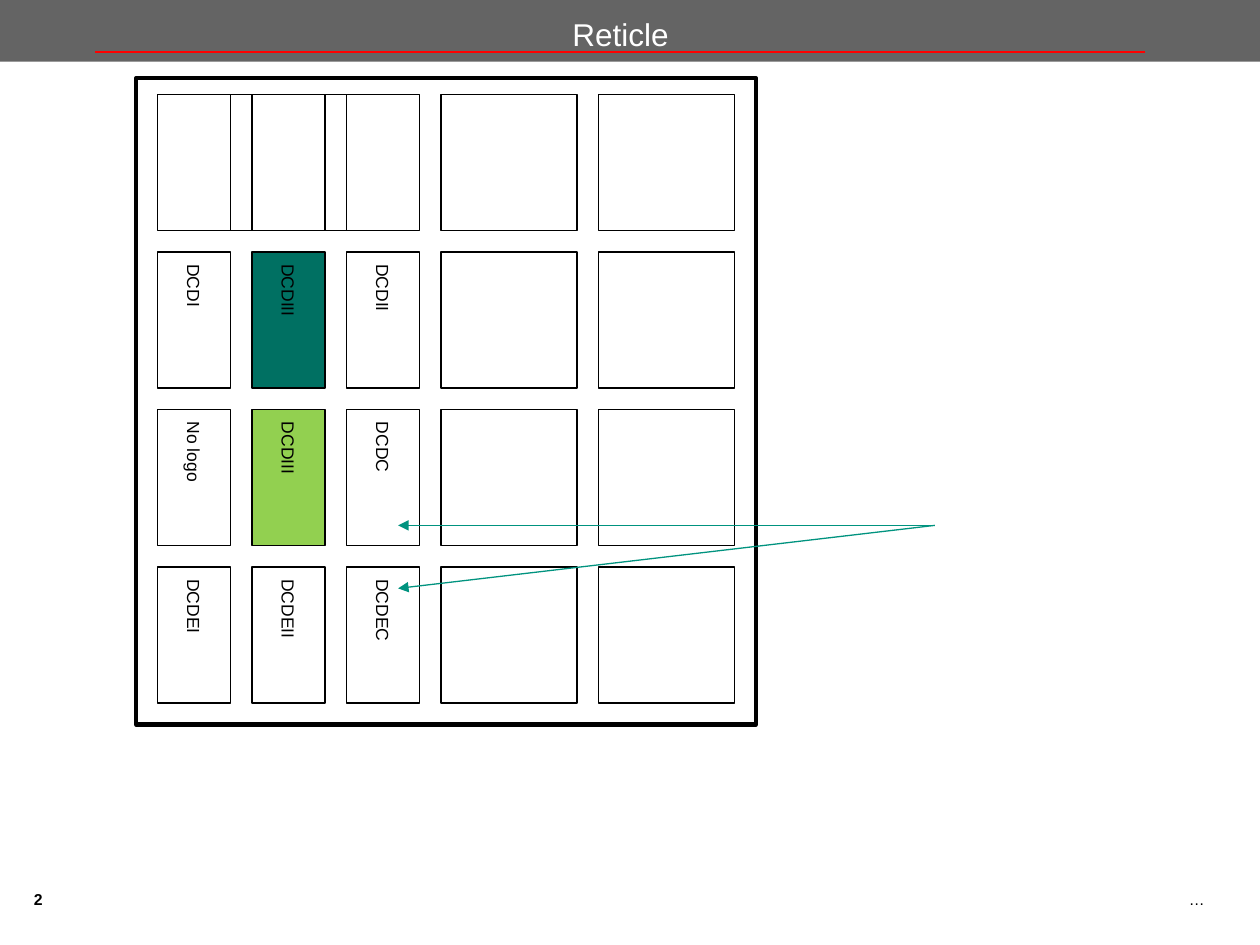
from itertools import product

from lxml.etree import SubElement
from pptx import Presentation
from pptx.dml.color import RGBColor
from pptx.enum.shapes import MSO_CONNECTOR as Conn, MSO_SHAPE as Kind
from pptx.enum.text import MSO_ANCHOR as Anchor, PP_ALIGN as Align
from pptx.oxml.ns import qn
from pptx.util import Inches, Pt

LEFT, TOP = 1.25, 0.75
STEP, PITCH = 0.75, 1.25
SLIM, SIDE, GAP = 0.58, 1.08, 0.17
WIDE = LEFT + 3 * STEP
DIES = [
    ["DCDI", "DCDIII", "DCDII"],
    ["No logo", "DCDIII", "DCDC"],
    ["DCDEI", "DCDEII", "DCDEC"],
]
FILLS = {(0, 1): "007062", (1, 1): "92D050"}


def paint(code):
    """Turn a hex string into a colour."""
    return RGBColor.from_string(code)


def write(frame, text, size, color="000000", align=Align.LEFT, bold=False):
    """Put one run of text into a frame."""
    para = frame.paragraphs[0]
    para.alignment = align
    run = para.add_run()
    run.text = text
    font = run.font
    font.name, font.size, font.bold = "Arial", Pt(size), bold
    font.color.rgb = paint(color)


def label(slide, box, text, size, inset=0, anchor=Anchor.TOP, **style):
    """Add a text box holding one line."""
    frame = slide.shapes.add_textbox(*map(Inches, box)).text_frame
    frame.word_wrap = True
    frame.vertical_anchor = anchor
    frame.margin_left = frame.margin_right = Inches(inset)
    frame.margin_top = frame.margin_bottom = Inches(inset / 2)
    write(frame, text, size, **style)


def block(slide, box, fill=None, width=0.75):
    """Add a rectangle, with an outline unless the width is zero."""
    shape = slide.shapes.add_shape(Kind.RECTANGLE, *map(Inches, box))
    shape.shadow.inherit = False
    if fill:
        shape.fill.solid()
        shape.fill.fore_color.rgb = paint(fill)
    else:
        shape.fill.background()
    if width:
        shape.line.color.rgb = paint("000000")
        shape.line.width = Pt(width)
    else:
        shape.line.fill.background()
    return shape


def die(slide, row, col, text):
    """Add a slim die with its name running downwards."""
    box = LEFT + col * STEP, TOP + (row + 1) * PITCH, SLIM, SIDE
    frame = block(slide, box, FILLS.get((row, col))).text_frame
    frame.word_wrap = True
    frame.vertical_anchor = Anchor.MIDDLE
    frame._txBody.bodyPr.set("vert", "eaVert")
    write(frame, text, 10)


def rule(slide, start, end, color, width, arrow=False):
    """Draw a straight line, with an arrowhead at its end if asked."""
    line = slide.shapes.add_connector(Conn.STRAIGHT, *map(Inches, start + end))
    line.line.color.rgb = paint(color)
    line.line.width = Pt(width)
    if arrow:
        SubElement(line.line._get_or_add_ln(), qn("a:tailEnd"), type="triangle")
    SubElement(line._element.spPr, qn("a:effectLst"))


def main():
    """Build the reticle slide."""
    deck = Presentation()
    deck.slide_width, deck.slide_height = Inches(10), Inches(7.5)
    slide = deck.slides.add_slide(deck.slide_layouts[6])

    label(slide, (6.57, 7.06, 2.99, 0.39), "…", 9, align=Align.RIGHT)
    label(slide, (0.27, 7.06, 0.36, 0.24), "2", 9, bold=True)
    block(slide, (0, 0, 10, 0.49), "646464", 0)
    rule(slide, (9.09, 0.41), (0.75, 0.41), "FF0000", 1)
    label(slide, (0.74, 0.08, 8.37, 0.38), "Reticle", 18, 0.1, Anchor.MIDDLE,
          color="FFFFFF", align=Align.CENTER)

    for row, names in enumerate(DIES):
        for col, name in enumerate(names):
            die(slide, row, col, name)

    block(slide, (LEFT, TOP, 2 * STEP + SLIM, SIDE))
    for col, row in product(range(2), range(4)):
        block(slide, (WIDE + col * PITCH, TOP + row * PITCH, SIDE, SIDE))
    for col in range(2):
        block(slide, (LEFT + SLIM + col * STEP, TOP, GAP, SIDE))
    block(slide, (1.08, 0.62, 4.92, 5.13), width=2.5)

    for tip in (4.17, 4.67):
        rule(slide, (7.42, 4.17), (3.16, tip), "00937F", 0.75, True)
    deck.save("out.pptx")


if __name__ == "__main__":
    main()
